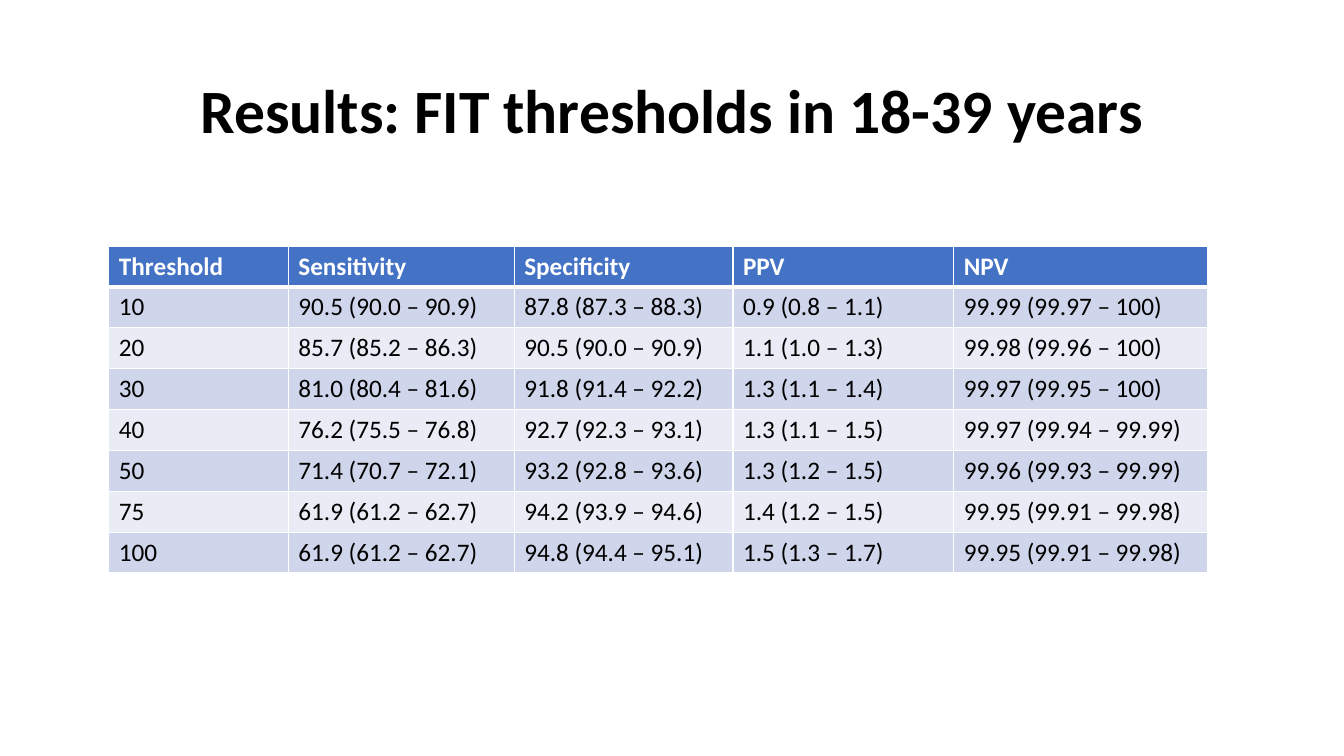
from lxml import etree
from pptx import Presentation
from pptx.dml.color import RGBColor
from pptx.enum.text import MSO_ANCHOR, PP_ALIGN
from pptx.oxml.ns import qn
from pptx.util import Inches, Pt

MIDDLE = MSO_ANCHOR.MIDDLE
CENTER = PP_ALIGN.CENTER
TITLE_ONLY = 5
FONT = "Calibri"
COLORS = {"head": "4472C4", "odd": "CFD5EA", "even": "E9EBF5",
          "white": "FFFFFF", "black": "000000"}
WIDTHS = [1.78, 2.24, 2.17, 2.19, 2.52]
ROWS = [
    ["Threshold", "Sensitivity", "Specificity", "PPV", "NPV"],
    ["10", "90.5 (90.0 – 90.9)", "87.8 (87.3 – 88.3)", "0.9 (0.8 – 1.1)", "99.99 (99.97 – 100)"],
    ["20", "85.7 (85.2 – 86.3)", "90.5 (90.0 – 90.9)", "1.1 (1.0 – 1.3)", "99.98 (99.96 – 100)"],
    ["30", "81.0 (80.4 – 81.6)", "91.8 (91.4 – 92.2)", "1.3 (1.1 – 1.4)", "99.97 (99.95 – 100)"],
    ["40", "76.2 (75.5 – 76.8)", "92.7 (92.3 – 93.1)", "1.3 (1.1 – 1.5)", "99.97 (99.94 – 99.99)"],
    ["50", "71.4 (70.7 – 72.1)", "93.2 (92.8 – 93.6)", "1.3 (1.2 – 1.5)", "99.96 (99.93 – 99.99)"],
    ["75", "61.9 (61.2 – 62.7)", "94.2 (93.9 – 94.6)", "1.4 (1.2 – 1.5)", "99.95 (99.91 – 99.98)"],
    ["100", "61.9 (61.2 – 62.7)", "94.8 (94.4 – 95.1)", "1.5 (1.3 – 1.7)", "99.95 (99.91 – 99.98)"],
]


def style(para, size, color, bold):
    """Set the font of a paragraph."""
    font = para.font
    font.name, font.size, font.bold = FONT, Pt(size), bold
    font.color.rgb = RGBColor.from_string(COLORS[color])


def add_title(slide, text, left, top, width, height):
    """Place the slide title in its box."""
    title = slide.shapes.title
    title.left, title.top = Inches(left), Inches(top)
    title.width, title.height = Inches(width), Inches(height)
    frame = title.text_frame
    frame.text = text
    frame.word_wrap = True
    frame.vertical_anchor = MIDDLE
    para = frame.paragraphs[0]
    para.alignment = CENTER
    para.line_spacing = 0.9
    style(para, 44, "black", True)


def add_edges(cell, row):
    """Draw white cell borders, thick below the header."""
    props = cell._tc.get_or_add_tcPr()
    thick = {0: "lnB", 1: "lnT"}.get(row)
    for side in ("lnL", "lnR", "lnT", "lnB"):
        width = Pt(3 if side == thick else 1)
        line = etree.SubElement(props, qn("a:" + side), w=str(width))
        fill = etree.SubElement(line, qn("a:solidFill"))
        etree.SubElement(fill, qn("a:srgbClr"), val=COLORS["white"])


def add_grid(slide, rows, left, top, width, height):
    """Place the table of results in its box."""
    grid = slide.shapes.add_table(len(rows), len(WIDTHS), Inches(left), Inches(top),
                                  Inches(width), Inches(height)).table
    for col, share in zip(grid.columns, WIDTHS):
        col.width = Inches(width * share / sum(WIDTHS))
    for r, texts in enumerate(rows):
        grid.rows[r].height = Inches(height / len(rows))
        band = "head" if r == 0 else "odd" if r % 2 else "even"
        for c, text in enumerate(texts):
            cell = grid.cell(r, c)
            cell.text = text
            add_edges(cell, r)
            cell.fill.solid()
            cell.fill.fore_color.rgb = RGBColor.from_string(COLORS[band])
            style(cell.text_frame.paragraphs[0], 18, "black" if r else "white", r == 0)


def main():
    """Build and save the slide."""
    deck = Presentation()
    deck.slide_width, deck.slide_height = Inches(13.33), Inches(7.5)
    slide = deck.slides.add_slide(deck.slide_layouts[TITLE_ONLY])
    add_title(slide, "Results: FIT thresholds in 18-39 years", 0.92, 0.4, 11.5, 1.45)
    add_grid(slide, ROWS, 1.08, 2.44, 10.9, 3.24)
    deck.save("out.pptx")


if __name__ == "__main__":
    main()
